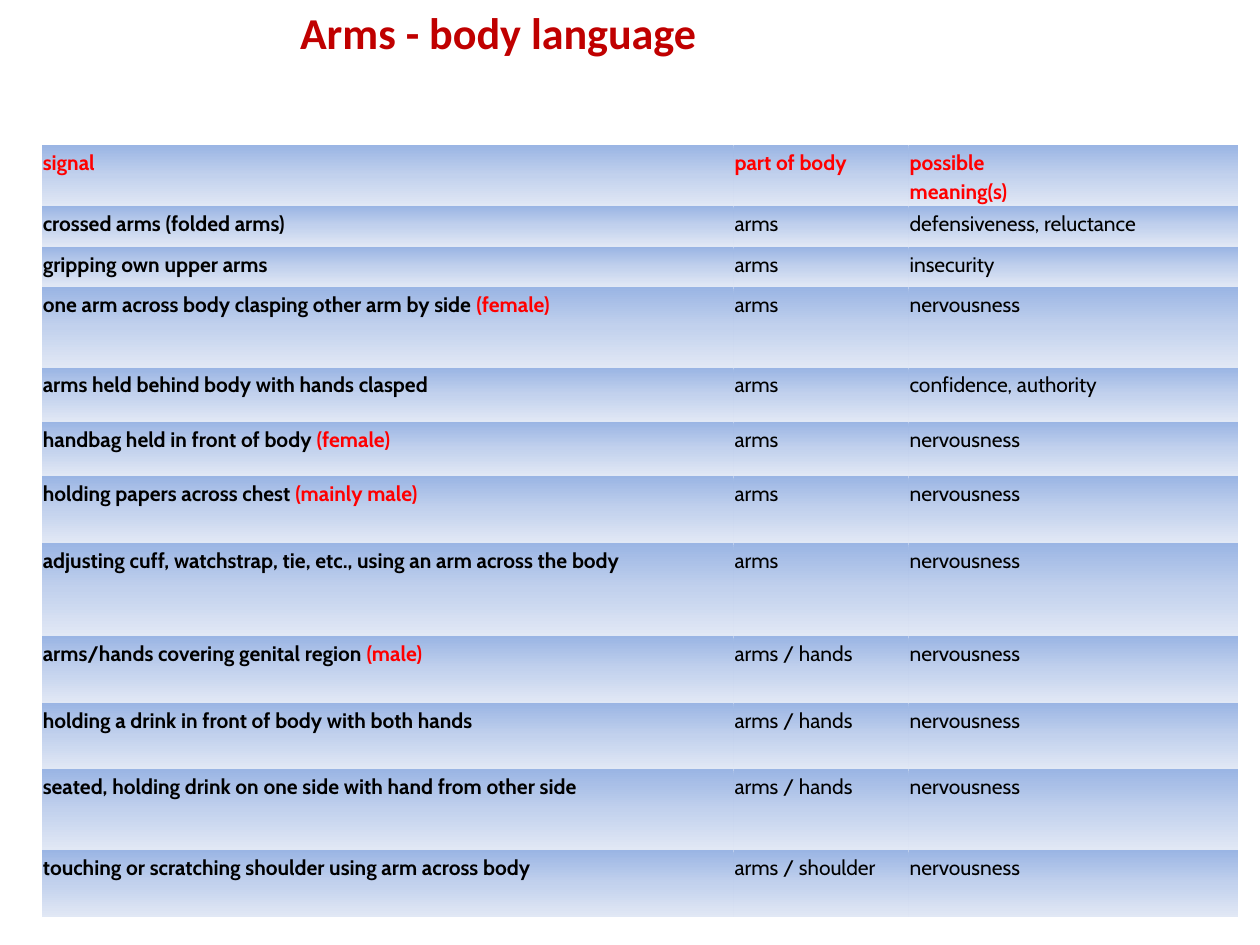
from lxml import etree
from pptx import Presentation
from pptx.dml.color import RGBColor
from pptx.enum import text
from pptx.oxml import parse_xml
from pptx.oxml.ns import nsdecls, qn
from pptx.util import Inches, Pt

RED, BLACK = "FF0000", "000000"
NO_STYLE_NO_GRID = "{2D5ABB26-0587-4C30-8999-92F81FD0307C}"
GRADIENT = [(0, "9AB5E4"), (50, "C2D1ED"), (100, "E1E8F5")]


def paint(font, colour):
    font.color.rgb = RGBColor.from_string(colour)


def fill_downwards(cell):
    """Fill a cell with the three-stop gradient, dark at the top."""
    fill = parse_xml(f'<a:gradFill {nsdecls("a")} rotWithShape="1"/>')
    stops = etree.SubElement(fill, qn("a:gsLst"))
    for percent, colour in GRADIENT:
        stop = etree.SubElement(stops, qn("a:gs"), pos=str(percent * 1000))
        etree.SubElement(stop, qn("a:srgbClr"), val=colour)
    etree.SubElement(fill, qn("a:lin"), ang="5400000", scaled="0")
    cell._tc.get_or_add_tcPr().append(fill)


deck = Presentation()
deck.slide_width, deck.slide_height = Inches(10), Inches(7.5)
page = deck.slides.add_slide(deck.slide_layouts[5])

title = page.shapes.title
title.left, title.top = Inches(0.58), Inches(0)
title.width, title.height = Inches(6.75), Inches(0.5)
title.text_frame.text = "Arms - body language"
title.text_frame.auto_size = text.MSO_AUTO_SIZE.NONE
title.text_frame.vertical_anchor = text.MSO_ANCHOR.MIDDLE
heading = title.text_frame.paragraphs[0]
heading.alignment = text.PP_ALIGN.CENTER
heading.font.name, heading.font.size, heading.font.bold = "Calibri", Pt(25.2), True
paint(heading.font, "C00000")

# Row height, signal, who shows it, part of body, possible meaning
signals = [
    (0.45, "signal", "", "part of body", "possible \vmeaning(s)"),
    (0.32, "crossed arms (folded arms)", "", "arms", "defensiveness, reluctance"),
    (0.32, "gripping own upper arms", "", "arms", "insecurity"),
    (0.64, "one arm across body clasping other arm by side ", "(female)", "arms", "nervousness"),
    (0.43, "arms held behind body with hands clasped", "", "arms", "confidence, authority"),
    (0.43, "handbag held in front of body ", "(female)", "arms", "nervousness"),
    (0.53, "holding papers across chest ", "(mainly male)", "arms", "nervousness"),
    (0.74, "adjusting cuff, watchstrap, tie, etc., using an arm across the body", "",
     "arms", "nervousness"),
    (0.53, "arms/hands covering genital region ", "(male)", "arms / hands", "nervousness"),
    (0.53, "holding a drink in front of body with both hands", "", "arms / hands", "nervousness"),
    (0.64, "seated, holding drink on one side with hand from other side", "",
     "arms / hands", "nervousness"),
    (0.53, "touching or scratching shoulder using arm across body", "",
     "arms / shoulder", "nervousness"),
]
column_widths = [5.49, 1.39, 2.62]

frame = page.shapes.add_table(len(signals), len(column_widths), Inches(0.33), Inches(1.15),
                              Inches(9.5), Inches(6.14))
table = frame.table
table.horz_banding = False
table._tbl.tblPr.find(qn("a:tableStyleId")).text = NO_STYLE_NO_GRID
for column, width in zip(table.columns, column_widths):
    column.width = Inches(width)

for row_index, (height, signal, who, body_part, meaning) in enumerate(signals):
    table.rows[row_index].height = Inches(height)
    for column_index, words in enumerate((signal, body_part, meaning)):
        cell = table.cell(row_index, column_index)
        cell.margin_left = cell.margin_right = Inches(0.01)
        cell.margin_top = cell.margin_bottom = Inches(0.01)
        fill_downwards(cell)
        cell.text = words
        para = cell.text_frame.paragraphs[0]
        para.line_spacing = 1.15
        if column_index == 0 and who:
            para.add_run().text = who
        for span in para.runs:
            span.font.name, span.font.size = "Cabin", Pt(12)
            span.font.bold = row_index == 0 or column_index == 0
            paint(span.font, RED if row_index == 0 or span.text == who else BLACK)

deck.save("out.pptx")
